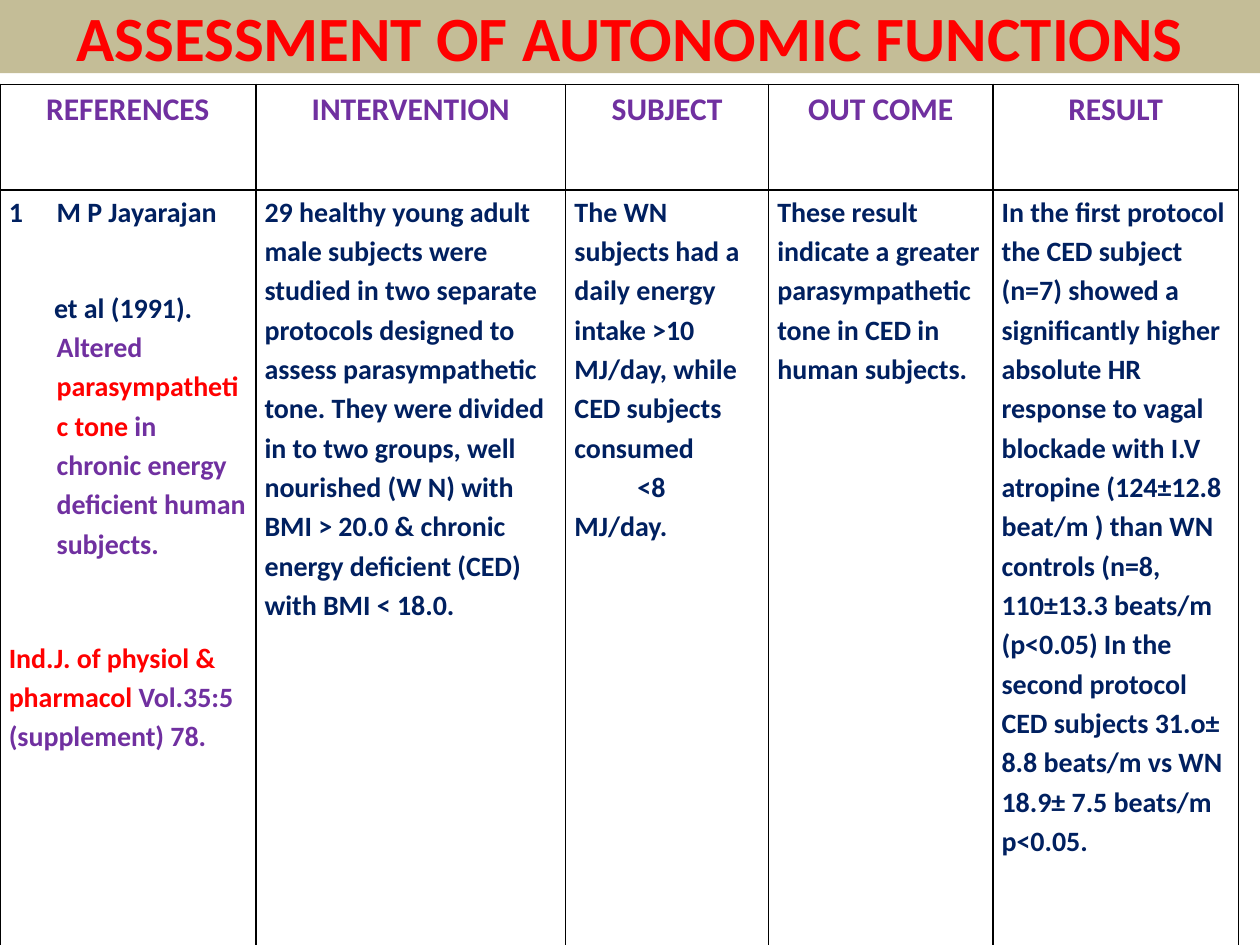
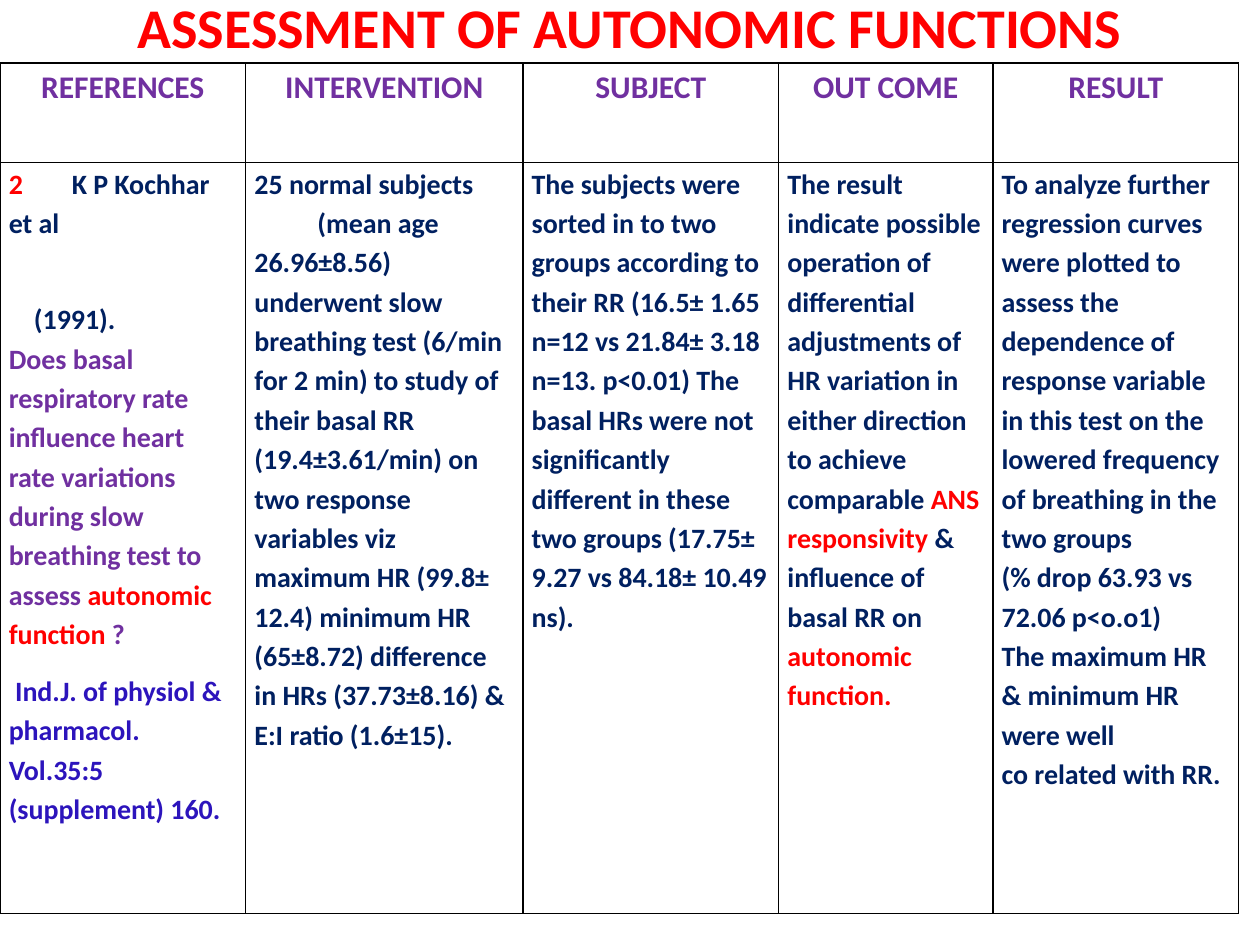
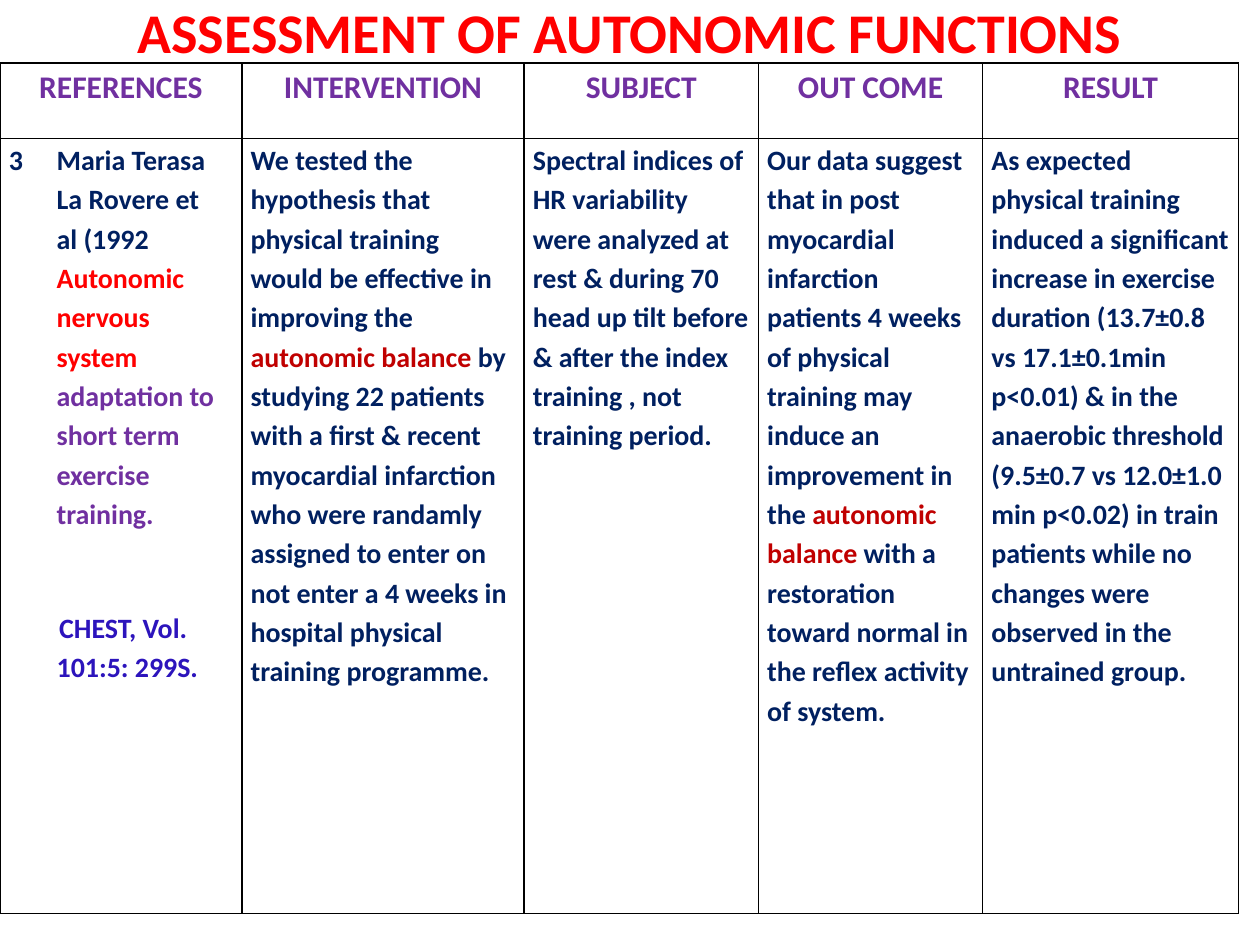
from dataclasses import dataclass

from lxml.etree import SubElement
from pptx import Presentation
from pptx.dml.color import RGBColor
from pptx.enum.text import MSO_ANCHOR, MSO_AUTO_SIZE, PP_ALIGN
from pptx.oxml.ns import qn
from pptx.util import Pt

PX = 9144
PAGE_WIDTH, PAGE_HEIGHT = 1000, 750
FONT = "Calibri"
TITLE = "ASSESSMENT OF AUTONOMIC FUNCTIONS"
HEADINGS = ["REFERENCES", "INTERVENTION", "SUBJECT", "OUT COME", "RESULT"]

RED = RGBColor(0xFF, 0x00, 0x00)
DARK_RED = RGBColor(0xC0, 0x00, 0x00)
PURPLE = RGBColor(0x70, 0x30, 0xA0)
NAVY = RGBColor(0x00, 0x20, 0x60)
INDIGO = RGBColor(0x2C, 0x14, 0xBC)
TAN = RGBColor(0xC4, 0xBD, 0x97)
BLACK = RGBColor(0x00, 0x00, 0x00)


@dataclass
class Para:
    """A paragraph of coloured spans with its indents, in px, and space before, in points."""
    spans: list
    margin: int = 0
    indent: int = 0
    before: float = 0
    number: int = 0
    tab: int = 0


@dataclass
class Study:
    """One slide: title size and height, table geometry and the five body cells."""
    title_size: int
    title_height: int
    table_top: int
    columns: list
    rows: list
    cells: list
    band: RGBColor = None


def plain(text, tab=0):
    """Return a cell holding one navy paragraph."""
    return [Para([(text, NAVY)], tab=tab)]


STUDIES = [
    Study(36, 58, 67, [203, 246, 161, 178, 195], [84, 603], [
        [
            Para([("M P Jayarajan", NAVY)], margin=38, indent=-38, number=1),
            Para([("et al (1991). ", NAVY), ("Altered ", PURPLE),
                  ("parasympathetic tone", RED),
                  (" in chronic energy deficient human subjects.", PURPLE)],
                 margin=38, indent=-2, before=22.5),
            Para([("Ind.J. of physiol & pharmacol ", RED),
                  ("Vol.35:5 (supplement) 78.", PURPLE)], before=32.5),
        ],
        plain("29 healthy young adult male subjects were studied in two separate "
              "protocols designed to assess parasympathetic tone. They were divided "
              "in to two groups, well nourished (W N) with BMI > 20.0 & chronic "
              "energy deficient (CED) with BMI < 18.0."),
        plain("The WN subjects had a daily energy intake >10 MJ/day, while CED "
              "subjects consumed\n\t<8 MJ/day.", tab=71),
        plain("These result indicate a greater parasympathetic tone in CED in "
              "human subjects."),
        plain("In the first protocol the CED subject (n=7) showed a significantly "
              "higher absolute HR response to vagal blockade with I.V atropine "
              "(124±12.8 beat/m ) than WN controls (n=8, 110±13.3 beats/m (p<0.05) "
              "In the second protocol CED subjects 31.o± 8.8 beats/m vs WN "
              "18.9± 7.5 beats/m p<0.05."),
    ], band=TAN),
    Study(32, 42, 50, [195, 220, 203, 170, 195], [79, 596], [
        [
            Para([("2", RED), ("\tK P Kochhar et al", NAVY)], tab=21),
            Para([("(1991).\n", NAVY),
                  ("Does basal respiratory rate influence heart rate variations "
                   "during slow breathing test to assess ", PURPLE),
                  ("autonomic function", RED), (" ?", PURPLE)],
                 indent=20, before=22.5),
            Para([("Ind.J. of physiol & pharmacol. Vol.35:5 (supplement) 160.", INDIGO)],
                 indent=5),
        ],
        plain("25 normal subjects\n\t(mean age 26.96±8.56) underwent slow breathing "
              "test (6/min for 2 min) to study of their basal RR (19.4±3.61/min) on "
              "two response variables viz maximum HR (99.8± 12.4) minimum HR "
              "(65±8.72) difference in HRs (37.73±8.16) & E:I ratio (1.6±15).", tab=60),
        plain("The subjects were sorted in to two groups according to their RR "
              "(16.5± 1.65 n=12 vs 21.84± 3.18 n=13. p<0.01) The basal HRs were not "
              "significantly different in these two groups (17.75± 9.27 vs "
              "84.18± 10.49 ns)."),
        [Para([("The result indicate possible operation of differential adjustments "
                "of HR variation in either direction to achieve comparable ", NAVY),
               ("ANS responsivity ", RED), ("& influence of basal RR on ", NAVY),
               ("autonomic function.", RED)])],
        plain("To analyze further regression curves were plotted to assess the "
              "dependence of response variable in this test on the lowered frequency "
              "of breathing in the two groups\n(% drop 63.93 vs 72.06 p<o.o1)\n"
              "The maximum HR & minimum HR were well\nco related with RR."),
    ]),
    Study(32, 50, 50, [192, 224, 186, 178, 203], [60, 615], [
        [
            Para([("Maria Terasa\nLa Rovere et\nal (1992 ", NAVY),
                  ("Autonomic nervous system ", RED),
                  ("adaptation to short term exercise training.", PURPLE)],
                 margin=38, indent=-38, number=3),
            Para([("CHEST, Vol. 101:5: 299S.", INDIGO)],
                 margin=38, indent=2, before=32.5),
        ],
        [Para([("We tested the hypothesis that physical training would be effective "
                "in improving the ", NAVY), ("autonomic balance ", DARK_RED),
               ("by studying 22 patients with a first & recent myocardial infarction "
                "who were randamly assigned to enter on not enter a 4 weeks in "
                "hospital physical training programme.", NAVY)])],
        plain("Spectral indices of HR variability were analyzed at rest & during 70 "
              "head up tilt before & after the index training , not training period."),
        [Para([("Our data suggest that in post myocardial infarction patients 4 weeks "
                "of physical training may induce an improvement in the ", NAVY),
               ("autonomic balance", DARK_RED),
               (" with a restoration toward normal in the reflex activity of system.",
                NAVY)])],
        plain("As expected physical training induced a significant increase in "
              "exercise duration (13.7±0.8 vs 17.1±0.1min p<0.01) & in the anaerobic "
              "threshold (9.5±0.7 vs 12.0±1.0 min p<0.02) in train patients while no "
              "changes were observed in the untrained group."),
    ]),
]


def set_font(target, size, color=None):
    """Apply the bold deck font to a paragraph."""
    font = target.font
    font.name, font.size, font.bold = FONT, Pt(size), True
    if color is not None:
        font.color.rgb = color


def add_spans(para, spans):
    """Write coloured spans, turning each newline into a line break."""
    for text, color in spans:
        for index, piece in enumerate(text.split("\n")):
            if index:
                para.add_line_break()
            if piece:
                span = para.add_run()
                span.text = piece
                span.font.color.rgb = color


def write_para(para, source, size, align):
    """Format one table paragraph and fill in its spans."""
    para.alignment = align
    para.line_spacing = 1.15
    para.space_after = Pt(10)
    if source.before:
        para.space_before = Pt(source.before)
    properties = para._p.get_or_add_pPr()
    properties.set("marL", str(source.margin * PX))
    properties.set("indent", str(source.indent * PX))
    if source.number:
        SubElement(properties, qn("a:buFont"), typeface="+mj-lt")
        SubElement(properties, qn("a:buAutoNum"), type="arabicPlain",
                   startAt=str(source.number))
    if source.tab:
        tabs = SubElement(properties, qn("a:tabLst"))
        SubElement(tabs, qn("a:tab"), pos=str(source.tab * PX), algn="l")
    set_font(para, size)
    add_spans(para, source.spans)


def add_borders(cell):
    """Draw a thin black line on all four sides of a cell."""
    properties = cell._tc.get_or_add_tcPr()
    for index, side in enumerate(("lnL", "lnR", "lnT", "lnB")):
        line = properties.makeelement(qn(f"a:{side}"), {"w": str(Pt(1))})
        properties.insert(index, line)
        fill = SubElement(line, qn("a:solidFill"))
        SubElement(fill, qn("a:srgbClr"), val=str(BLACK))


def fill_cell(cell, paras, size, align=PP_ALIGN.LEFT):
    """Fill one table cell with paragraphs and give it its frame."""
    cell.margin_left = cell.margin_right = 7 * PX
    cell.margin_top = cell.margin_bottom = 0
    cell.vertical_anchor = MSO_ANCHOR.TOP
    cell.fill.background()
    add_borders(cell)
    frame = cell.text_frame
    for index, source in enumerate(paras):
        para = frame.add_paragraph() if index else frame.paragraphs[0]
        write_para(para, source, size, align)


def add_title(page, study):
    """Place the title across the top of the page, on a band if there is one."""
    title = page.shapes.title
    title.left, title.top = 0, 0
    title.width, title.height = PAGE_WIDTH * PX, study.title_height * PX
    if study.band is not None:
        title.fill.solid()
        title.fill.fore_color.rgb = study.band
    frame = title.text_frame
    frame.auto_size = MSO_AUTO_SIZE.NONE
    frame.vertical_anchor = MSO_ANCHOR.MIDDLE
    para = frame.paragraphs[0]
    para.alignment = PP_ALIGN.CENTER
    set_font(para, study.title_size, RED)
    para.add_run().text = TITLE


def add_study_table(page, study):
    """Build the heading row and the body row of a study."""
    table = page.shapes.add_table(
        2, len(HEADINGS), 0, study.table_top * PX,
        sum(study.columns) * PX, sum(study.rows) * PX).table
    table.first_row = table.horz_banding = False
    for row, height in zip(table.rows, study.rows):
        row.height = height * PX
    for index, width in enumerate(study.columns):
        table.columns[index].width = width * PX
        heading = Para([(HEADINGS[index], PURPLE)])
        fill_cell(table.cell(0, index), [heading], 18, PP_ALIGN.CENTER)
        fill_cell(table.cell(1, index), study.cells[index], 16)


def main():
    """Build and save the deck."""
    deck = Presentation()
    deck.slide_width, deck.slide_height = PAGE_WIDTH * PX, PAGE_HEIGHT * PX
    for study in STUDIES:
        page = deck.slides.add_slide(deck.slide_layouts[5])
        add_title(page, study)
        add_study_table(page, study)
    deck.save("out.pptx")


if __name__ == "__main__":
    main()
